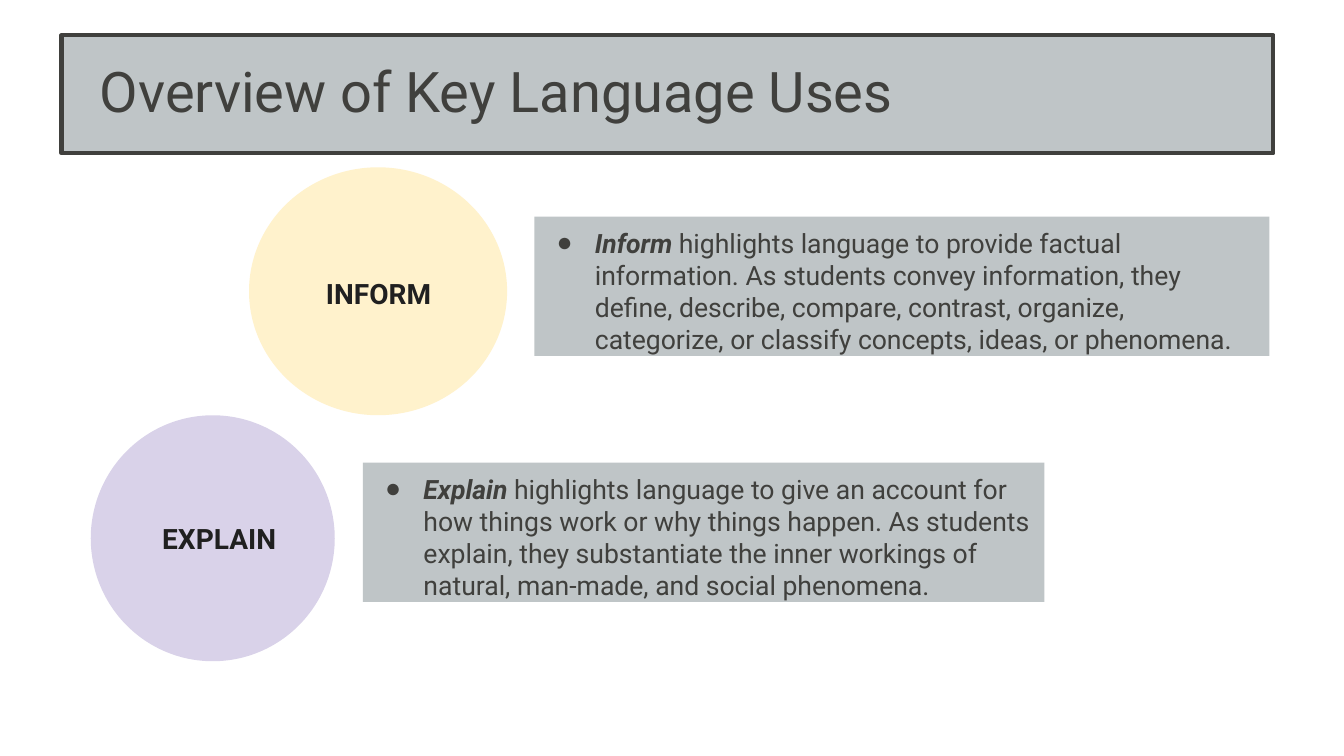
from dataclasses import dataclass

from lxml import etree
from pptx import Presentation
from pptx.dml.color import RGBColor
from pptx.enum import shapes, text
from pptx.oxml import ns
from pptx.util import Inches, Pt


@dataclass(frozen=True)
class Theme:
    font: str = "Roboto"
    ink: str = "40403D"
    dark: str = "202020"
    panel: str = "BFC5C7"
    head: int = 40
    label: int = 20
    body: int = 19


THEME = Theme()
TITLE = "Overview of Key Language Uses"
TITLE_BOX = (0.61, 0.35, 12.02, 1.17)
USES = [
    {
        "name": "Inform",
        "text": "highlights language to provide factual information. As students "
                "convey information, they define, describe, compare, contrast, "
                "organize, categorize, or classify concepts, ideas, or phenomena.",
        "fill": "FFF2CC",
        "disc": (2.47, 1.66, 2.56, 2.46),
        "label": (3.01, 2.54, 1.49, 0.69),
        "panel": (5.3, 2.15, 7.29, 1.48),
    },
    {
        "name": "Explain",
        "text": "highlights language to give an account for how things work or why "
                "things happen. As students explain, they substantiate the inner "
                "workings of natural, man-made, and social phenomena.",
        "fill": "D9D2E9",
        "disc": (0.9, 4.12, 2.42, 2.44),
        "label": (1.41, 5, 1.53, 0.64),
        "panel": (3.6, 4.59, 6.76, 1.48),
    },
]


def place(shape, box):
    shape.left, shape.top, shape.width, shape.height = map(Inches, box)


def paint(shape, color):
    shape.fill.solid()
    shape.fill.fore_color.rgb = RGBColor.from_string(color)


def style(run, size, color, bold=False, italic=False):
    font = run.font
    font.name, font.size = THEME.font, Pt(size)
    font.bold, font.italic = bold, italic
    font.color.rgb = RGBColor.from_string(color)


def setup(frame, inset, anchor, fit=text.MSO_AUTO_SIZE.NONE):
    frame.word_wrap = True
    frame.auto_size = fit
    frame.vertical_anchor = anchor
    frame.margin_left = frame.margin_right = Inches(inset)
    frame.margin_top = frame.margin_bottom = Inches(inset)


def add_title(shape):
    place(shape, TITLE_BOX)
    paint(shape, THEME.panel)
    shape.line.color.rgb = RGBColor.from_string(THEME.ink)
    shape.line.width = Pt(3)
    frame = shape.text_frame
    frame.text = TITLE
    setup(frame, 0.05, text.MSO_ANCHOR.MIDDLE)
    frame.margin_left = Inches(0.38)
    line = frame.paragraphs[0]
    line.alignment = text.PP_ALIGN.LEFT
    line.line_spacing = 0.9
    style(line.runs[0], THEME.head, THEME.ink)


def add_disc(slide, use):
    group = slide.shapes.add_group_shape()
    kinds = shapes.MSO_SHAPE
    for kind, key in ((kinds.OVAL, "disc"), (kinds.RECTANGLE, "label")):
        shape = group.shapes.add_shape(kind, *map(Inches, use[key]))
        shape.shadow.inherit = False
        shape.line.fill.background()
        paint(shape, use["fill"])
    frame = shape.text_frame
    frame.text = use["name"].upper()
    setup(frame, 0.13, text.MSO_ANCHOR.MIDDLE)
    line = frame.paragraphs[0]
    line.alignment = text.PP_ALIGN.CENTER
    line.line_spacing = 1.15
    style(line.runs[0], THEME.label, THEME.dark, bold=True)


def add_panel(shape, use):
    place(shape, use["panel"])
    paint(shape, THEME.panel)
    frame = shape.text_frame
    frame.text = use["name"] + " "
    setup(frame, 0.1, text.MSO_ANCHOR.TOP, text.MSO_AUTO_SIZE.SHAPE_TO_FIT_TEXT)
    line = frame.paragraphs[0]
    line.space_before = Pt(0)
    line.line_spacing = 1.0
    props = line._p.get_or_add_pPr()
    props.set("marL", str(Inches(0.5)))
    props.set("indent", str(Inches(-0.38)))
    etree.SubElement(props, ns.qn("a:buChar")).set("char", "●")
    style(line.runs[0], THEME.body, THEME.ink, bold=True, italic=True)
    rest = line.add_run()
    rest.text = use["text"]
    style(rest, THEME.body, THEME.ink)


def main():
    deck = Presentation()
    deck.slide_width, deck.slide_height = Inches(13.33), Inches(7.5)
    slide = deck.slides.add_slide(deck.slide_layouts.get_by_name("Two Content"))
    title, *panels = slide.placeholders
    add_title(title)
    for use, panel in zip(USES, panels):
        add_disc(slide, use)
        add_panel(panel, use)
    deck.save("out.pptx")


if __name__ == "__main__":
    main()
